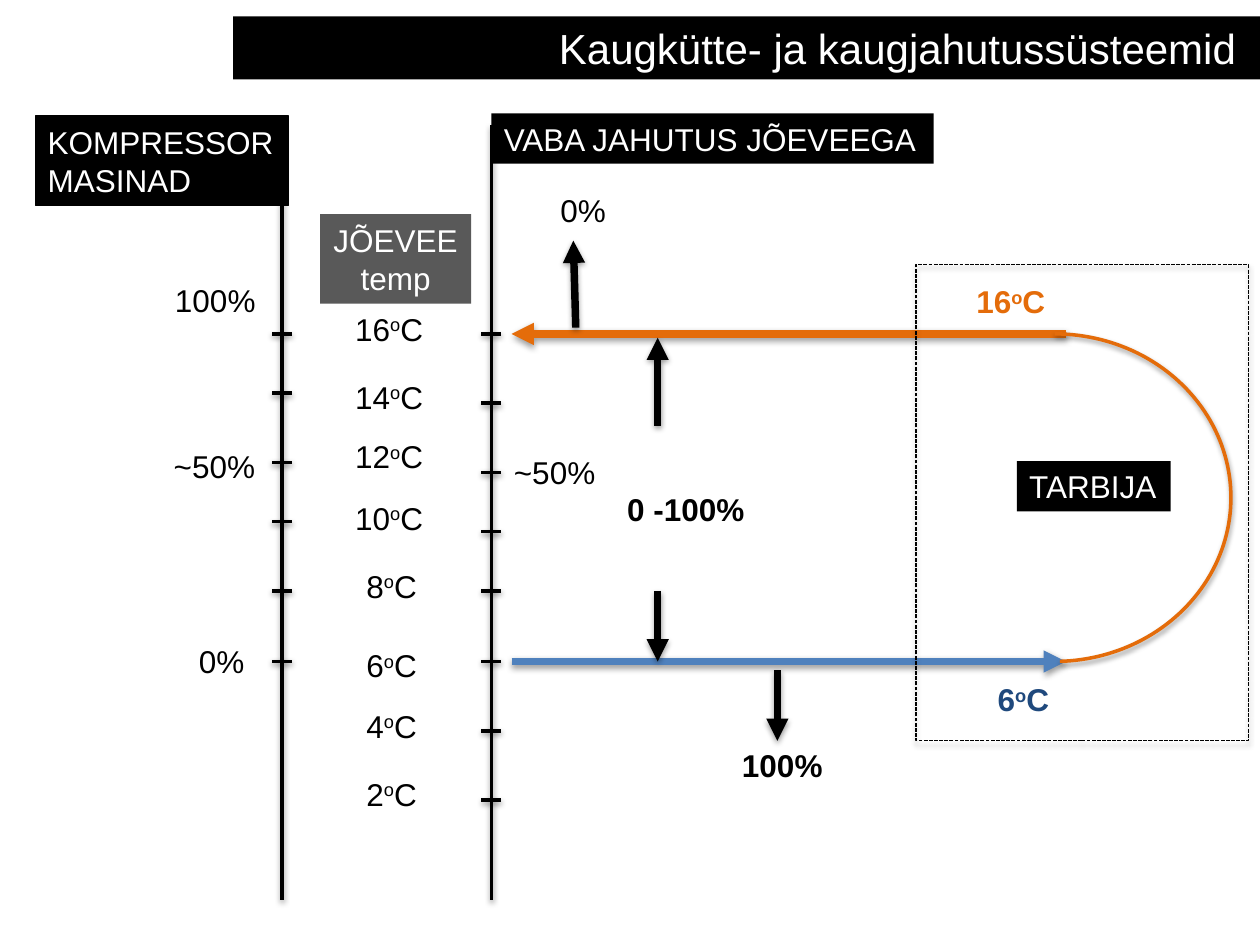
import pptx
import pptx.util
import pptx.dml.color
import pptx.enum.dml
import pptx.enum.shapes
import pptx.enum.text
import pptx.oxml
import pptx.oxml.ns

PX = 9144
FONT = "Arial"
COLORS = {
    "black": "000000",
    "white": "FFFFFF",
    "grey": "595959",
    "orange": "E46C0A",
    "blue": "4F81BD",
    "navy": "1F497D",
}
SHAPE = pptx.enum.shapes.MSO_SHAPE
ALIGN = pptx.enum.text.PP_ALIGN
NS = pptx.oxml.ns.nsdecls("a")
ROW = 40


def px(*values):
    return [pptx.util.Emu(v * PX) for v in values]


def rgb(name):
    return pptx.dml.color.RGBColor.from_string(COLORS[name])


def add_shadow(sp, alpha=38, dist=20000):
    spPr = sp._element.spPr
    for old in spPr.findall(pptx.oxml.ns.qn("a:effectLst")):
        spPr.remove(old)
    spPr.append(pptx.oxml.parse_xml(
        f'<a:effectLst {NS}><a:outerShdw blurRad="40000" dist="{dist}" dir="5400000" '
        f'rotWithShape="0"><a:srgbClr val="{COLORS["black"]}">'
        f'<a:alpha val="{alpha * 1000}"/></a:srgbClr></a:outerShdw></a:effectLst>'))


def add_line(s, x1, y1, x2, y2, color="black", width=2, arrow=False):
    sp = s.shapes.add_connector(pptx.enum.shapes.MSO_CONNECTOR.STRAIGHT, *px(x1, y1, x2, y2))
    sp.line.color.rgb = rgb(color)
    sp.line.width = pptx.util.Pt(width)
    if arrow:
        sp.line._get_or_add_ln().append(pptx.oxml.parse_xml(f'<a:tailEnd {NS} type="triangle"/>'))
    add_shadow(sp)


def add_arrow(s, x1, y1, x2, y2, color="black"):
    add_line(s, x1, y1, x2, y2, color, 4.25, True)


def add_shape(s, kind, x, y, w, h, fill=None, line=None, width=0.75):
    sp = s.shapes.add_shape(kind, *px(x, y, w, h))
    sp.shadow.inherit = False
    if fill:
        sp.fill.solid()
        sp.fill.fore_color.rgb = rgb(fill)
    else:
        sp.fill.background()
    if line:
        sp.line.color.rgb = rgb(line)
        sp.line.width = pptx.util.Pt(width)
    else:
        sp.line.fill.background()
    return sp


def add_run(p, text, color, size, bold):
    r = p.add_run()
    r.text = text
    r.font.name = FONT
    r.font.size = pptx.util.Pt(size)
    r.font.bold = bold
    r.font.color.rgb = rgb(color)
    return r


def write(sp, lines, color="black", size=18, bold=False, align=ALIGN.LEFT, wrap=False):
    tf = sp.text_frame
    tf.word_wrap = wrap
    tf.auto_size = pptx.enum.text.MSO_AUTO_SIZE.SHAPE_TO_FIT_TEXT
    for i, line in enumerate(lines):
        p = tf.add_paragraph() if i else tf.paragraphs[0]
        p.alignment = align
        add_run(p, line, color, size, bold)
    return tf.paragraphs[-1]


def add_label(s, x, y, w, text, color="black", bold=False):
    sp = s.shapes.add_textbox(*px(x, y, w, ROW))
    return write(sp, [text], color, bold=bold)


def add_temp(s, x, y, w, degrees, color="black", bold=False):
    p = add_label(s, x, y, w, str(degrees), color, bold)
    r = add_run(p, "o", color, 18, bold)
    r.font._element.set("baseline", "30000")
    add_run(p, "C", color, 18, bold)


def add_plate(s, x, y, w, h, lines, fill="black", line=None, **text):
    sp = add_shape(s, SHAPE.RECTANGLE, x, y, w, h, fill, line)
    return write(sp, lines, "white", **text)


def add_axis(s, x, y, h, ticks):
    add_line(s, x, y + h, x, y)
    for tick in ticks:
        add_line(s, x - 8, y + tick, x + 8, y + tick)


def add_title(s, x, y, w, h):
    add_plate(s, x, y, w, h, ["Kaugkütte- ja kaugjahutussüsteemid "],
              size=24, align=ALIGN.RIGHT, wrap=True)


def add_compressors(s, x, y, h):
    add_axis(s, x + 196, y + 7, h - 7, [166, 213, 268, 315, 370, 426])
    p = add_plate(s, x, y, 201, 71, ["KOMPRESSOR"], line="black", wrap=True)
    p.add_line_break()
    add_run(p, "MASINAD", "white", 18, False)
    for dx, dy, w, text in [(101, 126, 85, "100%"), (100, 258, 85, "~50%"), (120, 413, 57, "0%")]:
        add_label(s, x + dx, y + dy, w, text)


def add_river_temps(s, x, y, w):
    add_plate(s, x, y, w, 71, ["JÕEVEE", "temp"], fill="grey", align=ALIGN.CENTER)
    for i, dy in enumerate([71, 125, 172, 221, 275, 338, 386, 440]):
        degrees = 16 - 2 * i
        dx, width = (18, 76) if degrees > 9 else (27, 62)
        add_temp(s, x + dx, y + dy, width, degrees)


def add_free_cooling(s, x, y, h):
    add_arrow(s, x + 16, y + 435, x + 456, y + 435, "blue")
    add_arrow(s, x + 456, y + 175, x + 16, y + 175, "orange")
    add_axis(s, x, y + 9, h - 9, [166, 221, 276, 323, 370, 426, 481, 536])
    add_plate(s, x, y, 351, ROW, ["VABA JAHUTUS JÕEVEEGA"])
    for dx, dy, w, text, bold in [
        (45, 57, 57, "0%", False),
        (8, 265, 85, "~50%", False),
        (98, 294, 114, "0 -100%", True),
        (189, 497, 85, "100%", True),
    ]:
        add_label(s, x + dx, y + dy, w, text, bold=bold)
    for x1, y1, x2, y2 in [
        (67, 170, 65, 101),
        (132, 248, 132, 178),
        (132, 379, 132, 435),
        (227, 442, 227, 498),
    ]:
        add_arrow(s, x + x1, y + y1, x + x2, y + y2)


def add_consumer(s, x, y, w, h):
    sp = add_shape(s, SHAPE.RECTANGLE, x, y, w, h, line="black")
    sp.line.dash_style = pptx.enum.dml.MSO_LINE.SQUARE_DOT
    add_shadow(sp, 35, 23000)
    add_temp(s, x + 38, y + 9, 77, 16, "orange", True)
    add_temp(s, x + 55, y + 325, 63, 6, "navy", True)
    add_plate(s, x + 80, y + 156, 122, ROW, ["TARBIJA"])
    arc = add_shape(s, SHAPE.ARC, x - 30, y + 55, 280, 260, line="orange", width=2)
    arc.adjustments[0] = 162
    arc.adjustments[1] = 52.87
    add_shadow(arc)


def main():
    prs = pptx.Presentation()
    prs.slide_width, prs.slide_height = px(1000, 750)
    s = prs.slides.add_slide(prs.slide_layouts[6])
    add_compressors(s, 28, 92, 622)
    add_river_temps(s, 254, 170, 120)
    add_free_cooling(s, 390, 90, 624)
    add_consumer(s, 727, 210, 264, 378)
    add_title(s, 185, 13, 815, 50)
    prs.save("out.pptx")


if __name__ == "__main__":
    main()
